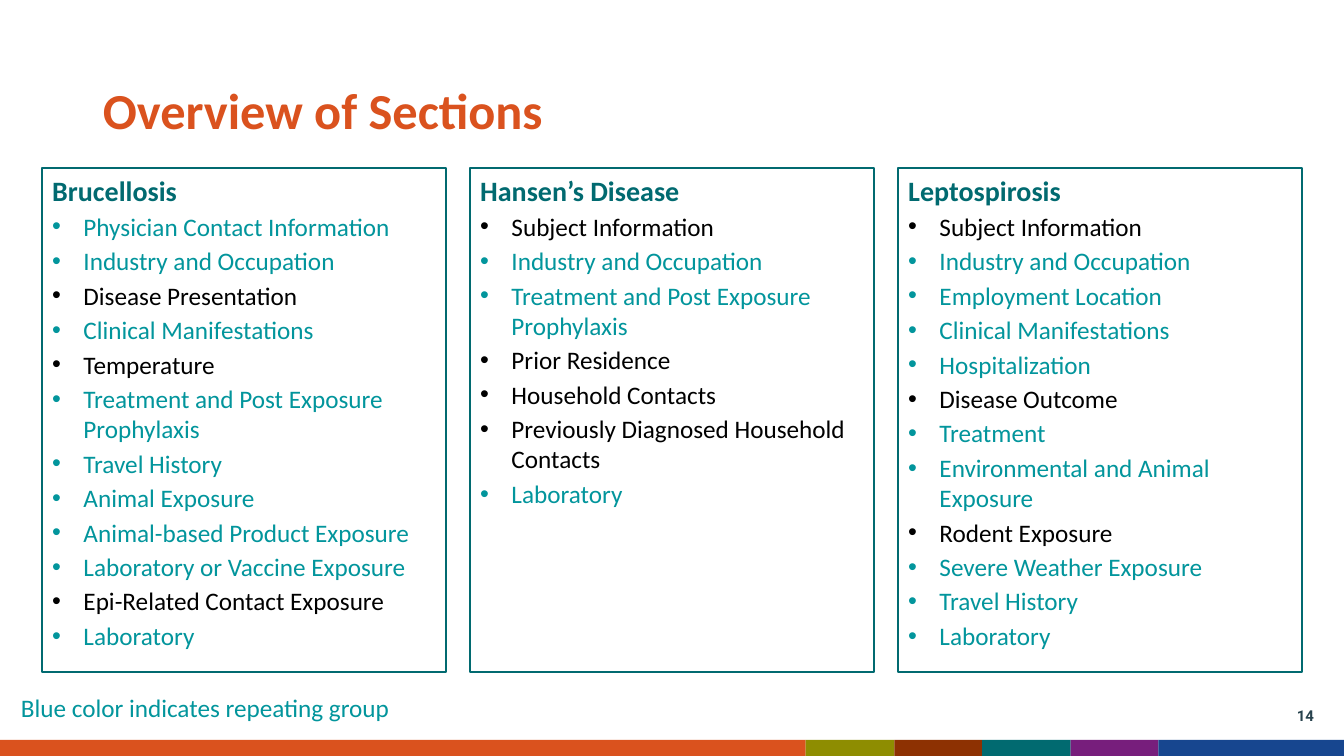
from lxml.etree import SubElement
from pptx import Presentation
from pptx.dml.color import RGBColor
from pptx.enum.shapes import MSO_SHAPE
from pptx.enum.text import MSO_ANCHOR, PP_ALIGN
from pptx.oxml.ns import qn
from pptx.util import Inches, Pt

WIDTH, HEIGHT = 13.33, 7.5
ORANGE, TEAL, BLUE, BLACK, SLATE = "DA521E", "016A70", "02959C", "000000", "28434E"

# Footer band: colour and width of each segment, left to right
BAND = [(ORANGE, 7.99), ("8E8D01", 0.88), ("8D3102", 0.87), (TEAL, 0.88),
        ("771E7C", 0.87), ("17468F", 1.84)]

SECTIONS = {
    "Brucellosis": [
        "Physician Contact Information", "Industry and Occupation",
        "Disease Presentation", "Clinical Manifestations", "Temperature",
        "Treatment and Post Exposure Prophylaxis", "Travel History",
        "Animal Exposure", "Animal-based Product Exposure",
        "Laboratory or Vaccine Exposure", "Epi-Related Contact Exposure",
        "Laboratory"],
    "Hansen’s Disease": [
        "Subject Information", "Industry and Occupation",
        "Treatment and Post Exposure Prophylaxis", "Prior Residence",
        "Household Contacts", "Previously Diagnosed Household Contacts",
        "Laboratory"],
    "Leptospirosis": [
        "Subject Information", "Industry and Occupation", "Employment Location",
        "Clinical Manifestations", "Hospitalization", "Disease Outcome",
        "Treatment", "Environmental and Animal Exposure", "Rodent Exposure",
        "Severe Weather Exposure", "Travel History", "Laboratory"],
}
# Sections that do not repeat are shown in black
SINGLE = {
    "Subject Information", "Disease Presentation", "Temperature",
    "Epi-Related Contact Exposure", "Prior Residence", "Household Contacts",
    "Previously Diagnosed Household Contacts", "Disease Outcome",
    "Rodent Exposure"}


def rgb(color):
    return RGBColor.from_string(color)


def add_run(p, text, size, color, bold=False, font="Calibri"):
    r = p.add_run()
    r.text = text
    r.font.size, r.font.bold, r.font.name = Pt(size), bold, font
    r.font.color.rgb = rgb(color)


def add_rect(s, x, y, w, h, fill=None, line=None):
    sp = s.shapes.add_shape(MSO_SHAPE.RECTANGLE, Inches(x), Inches(y),
                            Inches(w), Inches(h))
    sp.shadow.inherit = False
    if fill:
        sp.fill.solid()
        sp.fill.fore_color.rgb = rgb(fill)
    else:
        sp.fill.background()
    if line:
        sp.line.color.rgb = rgb(line)
        sp.line.width = Pt(1.5)
    else:
        sp.line.fill.background()
    return sp


def add_bullet(p, indent=0.31):
    pPr = p._p.get_or_add_pPr()
    pPr.set("marL", str(Inches(indent)))
    pPr.set("indent", str(-Inches(indent)))
    SubElement(pPr, qn("a:buFont")).set("typeface", "Arial")
    SubElement(pPr, qn("a:buChar")).set("char", "•")


def add_title(s, text, x, y, w, h):
    sp = s.shapes.title
    sp.left, sp.top, sp.width, sp.height = map(Inches, (x, y, w, h))
    sp.text_frame.vertical_anchor = MSO_ANCHOR.MIDDLE
    p = sp.text_frame.paragraphs[0]
    p.alignment, p.line_spacing = PP_ALIGN.LEFT, 0.9
    add_run(p, text, 36, ORANGE, bold=True)


def add_section_box(s, heading, items, x, y, w, h):
    tf = add_rect(s, x, y, w, h, line=TEAL).text_frame
    tf.word_wrap, tf.vertical_anchor = True, MSO_ANCHOR.TOP
    p = tf.paragraphs[0]
    p.alignment, p.space_before = PP_ALIGN.LEFT, Pt(3)
    add_run(p, heading, 20, TEAL, bold=True)
    for item in items:
        p = tf.add_paragraph()
        p.alignment, p.space_before = PP_ALIGN.LEFT, Pt(3)
        add_bullet(p)
        add_run(p, item, 18, BLACK if item in SINGLE else BLUE)


def add_columns(s, x, y, w, h, pitch):
    for i, (heading, items) in enumerate(SECTIONS.items()):
        add_section_box(s, heading, items, x + i * pitch, y, w, h)


def add_label(s, x, y, w, h, anchor, align, *run, **style):
    tf = s.shapes.add_textbox(Inches(x), Inches(y), Inches(w),
                              Inches(h)).text_frame
    tf.word_wrap, tf.vertical_anchor = True, anchor
    p = tf.paragraphs[0]
    p.alignment = align
    add_run(p, *run, **style)


def add_band(s, x, y, h):
    for color, w in BAND:
        add_rect(s, x, y, w, h, fill=color)
        x += w


def main():
    prs = Presentation()
    prs.slide_width, prs.slide_height = Inches(WIDTH), Inches(HEIGHT)
    s = prs.slides.add_slide(prs.slide_layouts[5])
    add_band(s, 0, HEIGHT - 0.16, 0.16)
    add_title(s, "Overview of Sections", 0.92, 0.4, 11.5, 1.45)
    add_columns(s, 0.42, 1.67, 4, 5, pitch=4.245)
    # Colour note and slide number
    add_label(s, 0.11, 6.82, 12.8, 0.4, MSO_ANCHOR.TOP, PP_ALIGN.LEFT,
              "Blue color indicates repeating group", 18, BLUE)
    add_label(s, 12.46, 6.9, 0.67, 0.4, MSO_ANCHOR.MIDDLE, PP_ALIGN.RIGHT,
              "14", 10.7, SLATE, bold=True, font="Roboto")
    prs.save("out.pptx")


if __name__ == "__main__":
    main()
